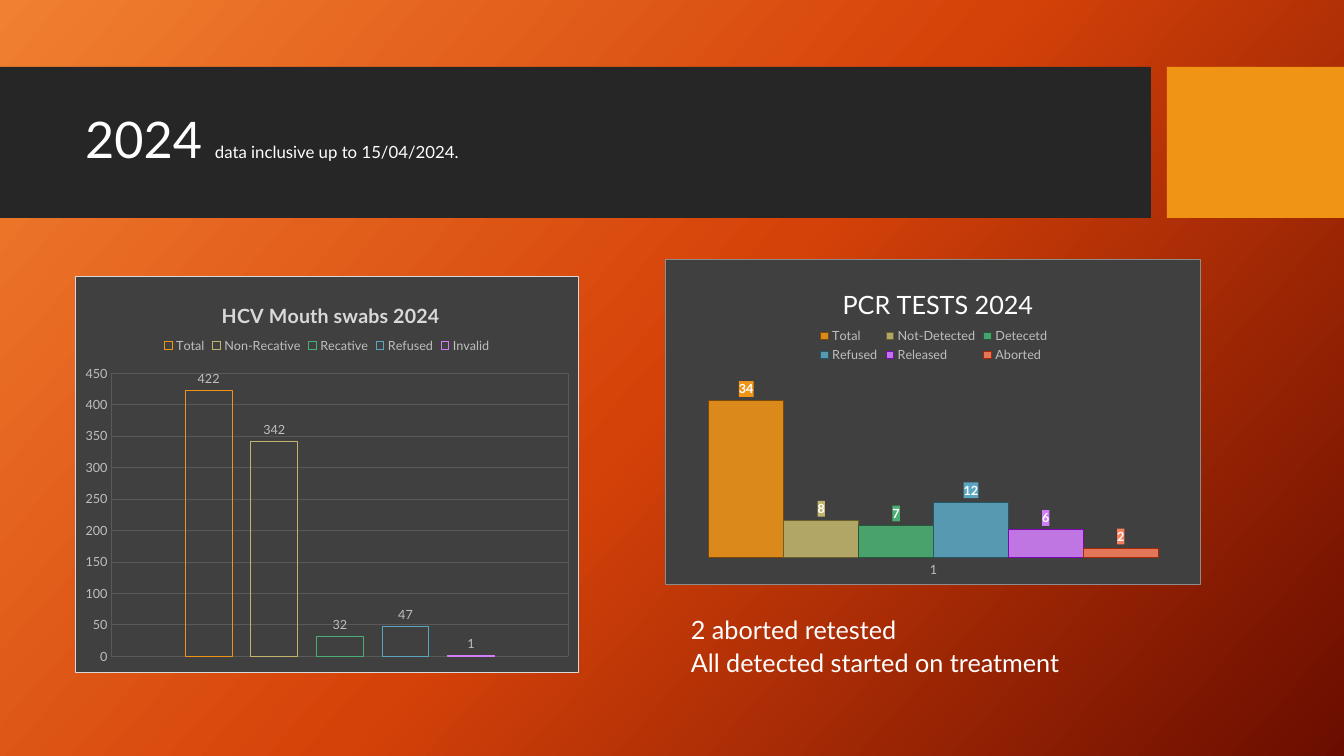
"""Build the 2024 testing slide with its two column charts."""
import lxml.etree
import pptx
import pptx.chart.data
import pptx.dml.color
import pptx.enum.chart
import pptx.enum.shapes
import pptx.enum.text
import pptx.oxml
import pptx.oxml.ns
import pptx.util

PAGE_WIDTH, PAGE_HEIGHT = 1344, 756
SCALE = 12192000 / PAGE_WIDTH
FONT = "Lato"
COLORS = {
    "white": "FFFFFF", "band": "262626", "panel": "404040", "grid": "595959",
    "label": "BFBFBF", "heading": "D9D9D9", "frame": "8C8C8C",
    "glow": "F18031", "flame": "D54209", "ember": "6A0D00",
    "orange": "F09415", "sand": "C1B56B", "green": "4BAF73",
    "blue": "5AA6C0", "violet": "D17DF9", "coral": "FA7E5C",
    "orange edge": "7B4A08", "sand edge": "6A612C", "green edge": "26583A",
    "blue edge": "275666", "violet edge": "7C08B3", "coral edge": "A62805",
}
SWABS = [("Total", 422, "orange"), ("Non-Recative", 342, "sand"),
         ("Recative", 32, "green"), ("Refused", 47, "blue"),
         ("Invalid", 1, "violet")]
PCR = [("Total", 34, "orange"), ("Not-Detected", 8, "sand"),
       ("Detecetd", 7, "green"), ("Refused", 12, "blue"),
       ("Released", 6, "violet"), ("Aborted", 2, "coral")]


def emu(*lengths):
    return [pptx.util.Emu(round(length * SCALE)) for length in lengths]


def rgb(name):
    return pptx.dml.color.RGBColor.from_string(COLORS[name])


def style(font, size, color, bold=False):
    font.name = FONT
    font.size = pptx.util.Pt(size)
    font.bold = bold
    font.color.rgb = rgb(color)


def outline(line, color, width=0.75):
    line.color.rgb = rgb(color)
    line.width = pptx.util.Pt(width)


def xml(markup):
    return pptx.oxml.parse_xml(markup.replace(
        ">", " " + pptx.oxml.ns.nsdecls("a", "c") + ">", 1))


def solid(color):
    return f'<a:solidFill><a:srgbClr val="{COLORS[color]}"/></a:solidFill>'


def paint_background(page, stops, angle):
    fill = page.background.fill
    fill.gradient()
    fill.gradient_angle = 360 - angle
    stop_list = page.background._cSld.find(".//" + pptx.oxml.ns.qn("a:gsLst"))
    for stop in list(stop_list):
        stop_list.remove(stop)
    for position, color in stops:
        stop_list.append(xml(f'<a:gs pos="{position * 1000}">'
                             f'<a:srgbClr val="{COLORS[color]}"/></a:gs>'))


def add_band(page, bounds, color):
    band = page.shapes.add_shape(
        pptx.enum.shapes.MSO_SHAPE.RECTANGLE, *emu(*bounds))
    band.shadow.inherit = False
    band.fill.solid()
    band.fill.fore_color.rgb = rgb(color)
    band.line.fill.background()


def set_title(page, bounds, parts):
    title = page.shapes.title
    title.left, title.top, title.width, title.height = emu(*bounds)
    page.shapes._spTree.append(title._element)
    frame = title.text_frame
    frame.auto_size = pptx.enum.text.MSO_AUTO_SIZE.NONE
    frame.vertical_anchor = pptx.enum.text.MSO_ANCHOR.MIDDLE
    para = frame.paragraphs[0]
    para.alignment = pptx.enum.text.PP_ALIGN.LEFT
    para.line_spacing = 0.9
    for text, size in parts:
        span = para.add_run()
        span.text = text
        style(span.font, size, "white")


def add_note(page, bounds, text):
    box = page.shapes.add_textbox(*emu(*bounds))
    box.text_frame.word_wrap = True
    box.text_frame.text = text
    style(box.text_frame.paragraphs[0].runs[0].font, 18, "white")


def place(element, index, bounds, frame, inner=False):
    """Fix a chart part at page bounds, as fractions of the chart frame."""
    for layout in element.findall(pptx.oxml.ns.qn("c:layout")):
        element.remove(layout)
    left, top, width, height = frame
    values = [(bounds[0] - left) / width, (bounds[1] - top) / height]
    values += [length / whole for length, whole in zip(bounds[2:], (width, height))]
    names = "xywh"[:len(values)]
    target = '<c:layoutTarget val="inner"/>' if inner else ""
    modes = "".join(f'<c:{name}Mode val="edge"/>' for name in "xy")
    sizes = "".join(f'<c:{name} val="{value:.4f}"/>'
                    for name, value in zip(names, values))
    element.insert(index, xml(
        f"<c:layout><c:manualLayout>{target}{modes}{sizes}"
        "</c:manualLayout></c:layout>"))


def add_columns(page, frame, rows, border, border_width, gap, overlap):
    data = pptx.chart.data.CategoryChartData()
    data.categories = ["1"]
    for name, value, color in rows:
        data.add_series(name, [value])
    chart = page.shapes.add_chart(
        pptx.enum.chart.XL_CHART_TYPE.COLUMN_CLUSTERED,
        *emu(*frame), data).chart
    style(chart.font, 10, "white")
    chart._chartSpace.find(pptx.oxml.ns.qn("c:txPr")).addprevious(xml(
        f'<c:spPr>{solid("panel")}<a:ln w="{int(border_width * 12700)}">'
        f"{solid(border)}</a:ln></c:spPr>"))
    plot = chart.plots[0]
    plot.vary_by_categories = False
    plot.gap_width, plot.overlap = gap, overlap
    for axis in (chart.category_axis, chart.value_axis):
        axis.major_tick_mark = pptx.enum.chart.XL_TICK_MARK.NONE
        axis.format.line.fill.background()
        style(axis.tick_labels.font, 9, "label")
    return chart


def set_heading(chart, frame, text, size, color, bold, corner):
    heading = chart.chart_title
    heading.text_frame.text = text
    heading.include_in_layout = False
    style(heading.text_frame.paragraphs[0].runs[0].font, size, color, bold)
    place(heading._element, 1, corner, frame)


def set_legend(chart, frame, bounds):
    chart.has_legend = True
    chart.legend.position = pptx.enum.chart.XL_LEGEND_POSITION.TOP
    chart.legend.include_in_layout = False
    style(chart.legend.font, 9, "label")
    place(chart.legend._element, 1, bounds, frame)


def set_series(chart, rows, filled):
    for series, (name, value, color) in zip(chart.plots[0].series, rows):
        labels = series.data_labels
        labels.show_value = True
        labels.position = pptx.enum.chart.XL_LABEL_POSITION.OUTSIDE_END
        style(labels.font, 9, "white" if filled else "label", filled)
        fill = series.format.fill
        if filled:
            fill.solid()
            fill.fore_color.rgb = rgb(color)
            shade = series._element.find(".//" + pptx.oxml.ns.qn("a:srgbClr"))
            shade.append(xml('<a:alpha val="88000"></a:alpha>'))
            labels._element.find(pptx.oxml.ns.qn("c:txPr")).addprevious(
                xml(f"<c:spPr>{solid(color)}</c:spPr>"))
        else:
            fill.background()
        outline(series.format.line, color + " edge" if filled else color)


def add_swabs_chart(page):
    frame = (75, 276, 504, 397)
    chart = add_columns(page, frame, SWABS, "heading", 0.75, 315, -40)
    set_heading(chart, frame, "HCV Mouth swabs 2024", 14, "heading", True, (218, 297))
    set_legend(chart, frame, (160, 334, 334, 22))
    set_series(chart, SWABS, False)
    chart.category_axis.visible = False
    chart.value_axis.minimum_scale = 0
    chart.value_axis.maximum_scale = 450
    chart.value_axis.major_unit = 50
    for axis in (chart.category_axis, chart.value_axis):
        axis.has_major_gridlines = True
        outline(axis.major_gridlines.format.line, "grid")
    place(chart._chartSpace.chart.plotArea, 0, (111, 373, 458, 284), frame, True)


def add_pcr_chart(page):
    frame = (665, 259, 536, 326)
    chart = add_columns(page, frame, PCR, "frame", 0.5, 84, 0)
    set_heading(chart, frame, "PCR TESTS 2024", 18, "white", False, (838, 281))
    set_legend(chart, frame, (816, 325, 236, 41))
    set_series(chart, PCR, True)
    chart.value_axis.visible = False
    chart.value_axis.has_major_gridlines = False
    chart.value_axis.minimum_scale = 0
    chart.value_axis.maximum_scale = 40
    place(chart._chartSpace.chart.plotArea, 0, (677, 373, 513, 185), frame, True)


def main():
    deck = pptx.Presentation()
    deck.slide_width, deck.slide_height = emu(PAGE_WIDTH, PAGE_HEIGHT)
    page = deck.slides.add_slide(deck.slide_layouts[5])
    paint_background(page, [(0, "glow"), (50, "flame"), (100, "ember")], 42)
    add_band(page, (0, 67, 1151, 151), "band")
    add_band(page, (1167, 67, 177, 151), "orange")
    set_title(page, (75, 83, 1059, 119),
              [("2024 ", 36), ("data inclusive up to 15/04/2024.", 12)])
    add_swabs_chart(page)
    add_note(page, (681, 642, 504, 40), "All detected started on treatment")
    add_pcr_chart(page)
    add_note(page, (681, 609, 438, 40), "2 aborted retested")
    deck.save("out.pptx")


if __name__ == "__main__":
    main()
